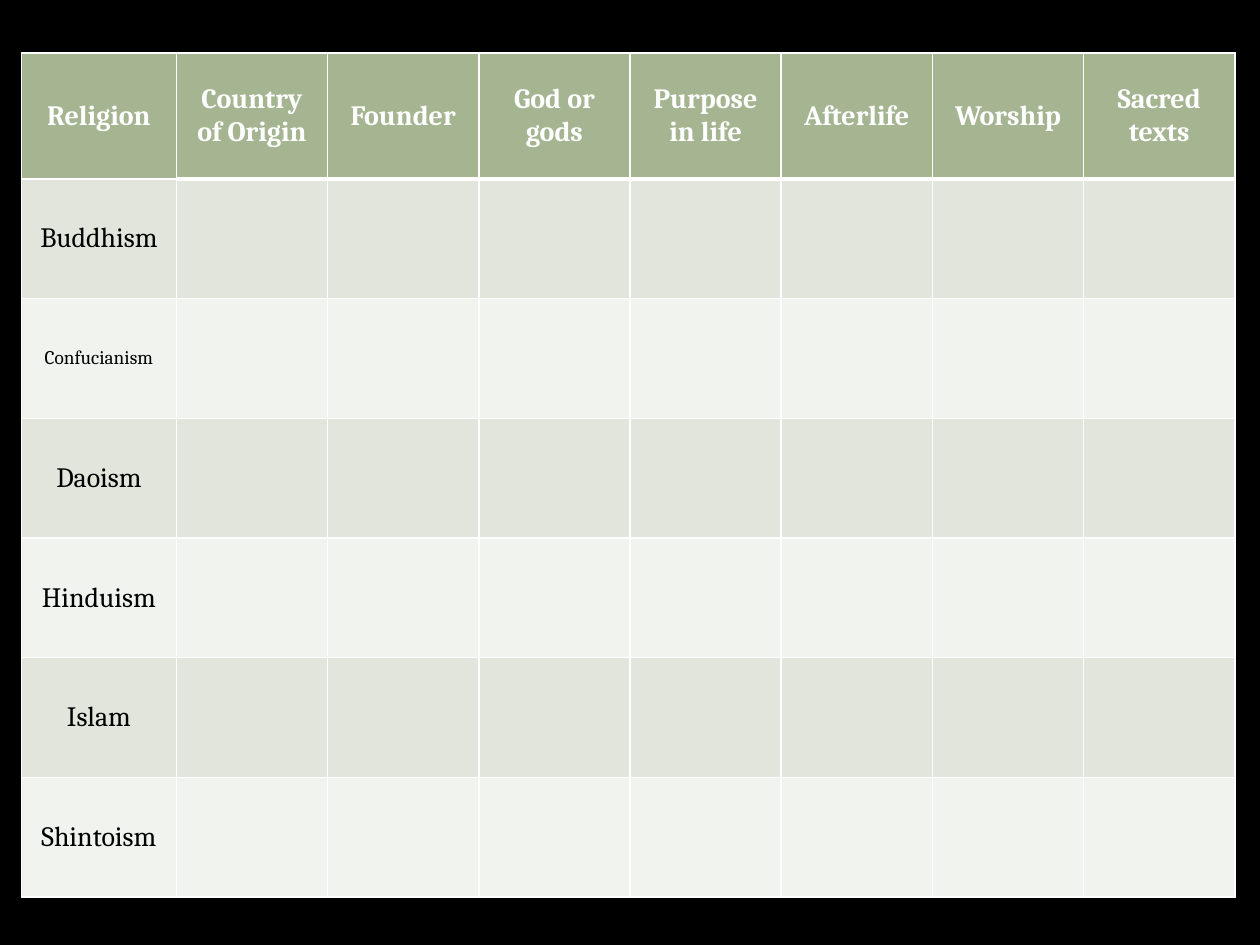
from lxml.etree import SubElement
from pptx import Presentation
from pptx.dml.color import RGBColor
from pptx.enum.text import MSO_ANCHOR as Anchor, PP_ALIGN as Align
from pptx.oxml.ns import qn
from pptx.util import Inches, Pt

HEADERS = ["Religion", "Country\nof Origin", "Founder", "God or gods",
           "Purpose in life", "Afterlife", "Worship", "Sacred texts"]
RELIGIONS = ["Buddhism", "Confucianism", "Daoism", "Hinduism", "Islam", "Shintoism"]
HEADER_FILL = "A5B592"
BAND_FILLS = ["F0F3EE", "E1E5DC"]


def color(hex_string):
    return RGBColor.from_string(hex_string)


def add_border(cell, side, width):
    properties = cell._tc.get_or_add_tcPr()
    line = SubElement(properties, qn(f"a:ln{side}"), w=str(Pt(width)))
    fill = SubElement(line, qn("a:solidFill"))
    SubElement(fill, qn("a:srgbClr"), val="FFFFFF")


presentation = Presentation()
presentation.slide_width = Inches(10)
presentation.slide_height = Inches(7.5)
slide = presentation.slides.add_slide(presentation.slide_layouts[6])
slide.background.fill.solid()
slide.background.fill.fore_color.rgb = color("000000")

# Table grid
table = slide.shapes.add_table(
    len(RELIGIONS) + 1, len(HEADERS),
    Inches(0.17), Inches(0.42), Inches(9.63), Inches(6.7)).table
for index, column in enumerate(table.columns):
    column.width = Inches(1.23 if index == 0 else 1.2)
for index, row in enumerate(table.rows):
    row.height = Inches(1 if index == 0 else 0.95)

# Borders, fills and text
for row_index, row in enumerate(table.rows):
    is_header = row_index == 0
    for column_index, cell in enumerate(row.cells):
        # The heavy rule under the header skips the first column
        heavy = 3 if column_index > 0 else 1
        add_border(cell, "L", 1)
        add_border(cell, "R", 1)
        add_border(cell, "T", heavy if row_index == 1 else 1)
        add_border(cell, "B", heavy if is_header else 1)
        cell.fill.solid()
        cell.fill.fore_color.rgb = color(HEADER_FILL if is_header else BAND_FILLS[row_index % 2])
        cell.vertical_anchor = Anchor.MIDDLE

        if is_header:
            cell.text_frame.text = HEADERS[column_index]
        elif column_index == 0:
            cell.text_frame.text = RELIGIONS[row_index - 1]
        for paragraph in cell.text_frame.paragraphs:
            paragraph.alignment = Align.CENTER
            for run in paragraph.runs:
                run.font.name = "Cambria"
                run.font.size = Pt(11 if run.text == "Confucianism" else 16)
                run.font.bold = is_header
                run.font.color.rgb = color("FFFFFF" if is_header else "000000")

presentation.save("out.pptx")
